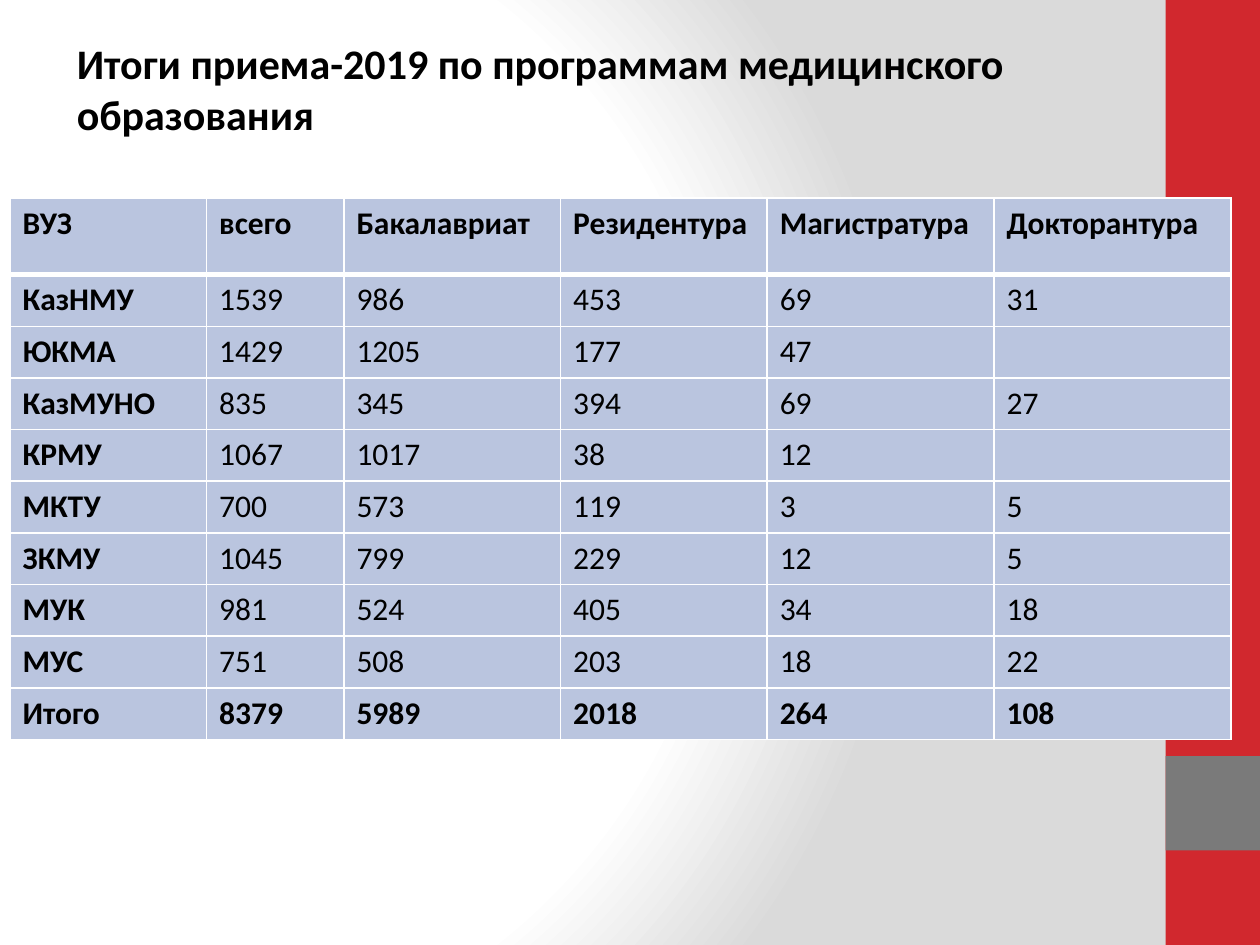
from lxml.etree import SubElement
from pptx import Presentation
from pptx.dml.color import RGBColor
from pptx.enum.shapes import MSO_SHAPE
from pptx.enum.text import MSO_ANCHOR, MSO_AUTO_SIZE, PP_ALIGN
from pptx.oxml.ns import qn
from pptx.util import Inches, Pt

THEME = {
    "font": "Calibri",
    "title_size": 24, "table_size": 18,
    "text": "000000", "white": "FFFFFF", "backdrop": "DADADA",
    "red": "D1282E", "grey": "7A7A7A", "cell": "BAC5DF",
}


def add_text(paragraph, text, size, bold):
    run = paragraph.add_run()
    run.text = text
    run.font.name = THEME["font"]
    run.font.size = Pt(size)
    run.font.bold = bold
    run.font.color.rgb = RGBColor.from_string(THEME["text"])


def add_border(cell_properties, side, width):
    line = SubElement(cell_properties, qn(f"a:{side}"), w=str(Pt(width)))
    fill = SubElement(line, qn("a:solidFill"))
    SubElement(fill, qn("a:srgbClr"), val=THEME["white"])


prs = Presentation()
prs.slide_width, prs.slide_height = Inches(10), Inches(7.5)
slide = prs.slides.add_slide(prs.slide_layouts[5])

# Background: radial gradient, white to grey
slide.background.fill.gradient()
gradient = slide.element.find(".//" + qn("a:gradFill"))
for child in list(gradient):
    gradient.remove(child)
stops = SubElement(gradient, qn("a:gsLst"))
for position, color in ((0, "white"), (75, "white"), (100, "backdrop")):
    stop = SubElement(stops, qn("a:gs"), pos=str(position * 1000))
    SubElement(stop, qn("a:srgbClr"), val=THEME[color])
radial = SubElement(gradient, qn("a:path"), path="circle")
SubElement(radial, qn("a:fillToRect"), l="20000", t="50000", r="100000", b="50000")

# Side band with its grey square
for top, height, color in ((0, 7.5, "red"), (6, 0.75, "grey")):
    band = slide.shapes.add_shape(
        MSO_SHAPE.RECTANGLE, Inches(9.25), Inches(top), Inches(0.75), Inches(height))
    band.shadow.inherit = False
    band.fill.solid()
    band.fill.fore_color.rgb = RGBColor.from_string(THEME[color])
    band.line.fill.background()

# Title
title = slide.shapes.title
title.left, title.top = Inches(0.51), Inches(0.3)
title.width, title.height = Inches(8.74), Inches(1.25)
heading = title.text_frame
heading.word_wrap = True
heading.auto_size = MSO_AUTO_SIZE.NONE
heading.vertical_anchor = MSO_ANCHOR.TOP
heading.margin_top = 0
heading.paragraphs[0].alignment = PP_ALIGN.LEFT
add_text(heading.paragraphs[0], "Итоги приема-2019 по программам медицинского образования",
         THEME["title_size"], True)

# Admissions table
admissions = [
    ("ВУЗ", "всего", "Бакалавриат", "Резидентура", "Магистратура", "Докторантура"),
    ("КазНМУ", "1539", "986", "453", "69", "31"),
    ("ЮКМА", "1429", "1205", "177", "47", ""),
    ("КазМУНО", "835", "345", "394", "69", "27"),
    ("КРМУ", "1067", "1017", "38", "12", ""),
    ("МКТУ", "700", "573", "119", "3", "5"),
    ("ЗКМУ", "1045", "799", "229", "12", "5"),
    ("МУК", "981", "524", "405", "34", "18"),
    ("МУС", "751", "508", "203", "18", "22"),
    ("Итого", "8379", "5989", "2018", "264", "108"),
]
column_widths = (1.56, 1.09, 1.72, 1.64, 1.8, 1.88)
last_row = len(admissions) - 1
table = slide.shapes.add_table(
    len(admissions), len(column_widths),
    Inches(0.08), Inches(1.57), Inches(9.69), Inches(4.26)).table
for column, width in zip(table.columns, column_widths):
    column.width = Inches(width)

for r, values in enumerate(admissions):
    table.rows[r].height = Inches(0.61 if r == 0 else 0.41)
    for c, value in enumerate(values):
        cell = table.cell(r, c)
        # Borders come before the fill in the cell properties
        properties = cell._tc.get_or_add_tcPr()
        for side in ("lnL", "lnR", "lnT", "lnB"):
            heavy = (r, side) in ((0, "lnB"), (1, "lnT"))
            add_border(properties, side, 3 if heavy else 1)
        cell.fill.solid()
        cell.fill.fore_color.rgb = RGBColor.from_string(THEME["cell"])
        if value:
            add_text(cell.text_frame.paragraphs[0], value, THEME["table_size"],
                     r in (0, last_row) or c == 0)

prs.save("out.pptx")
